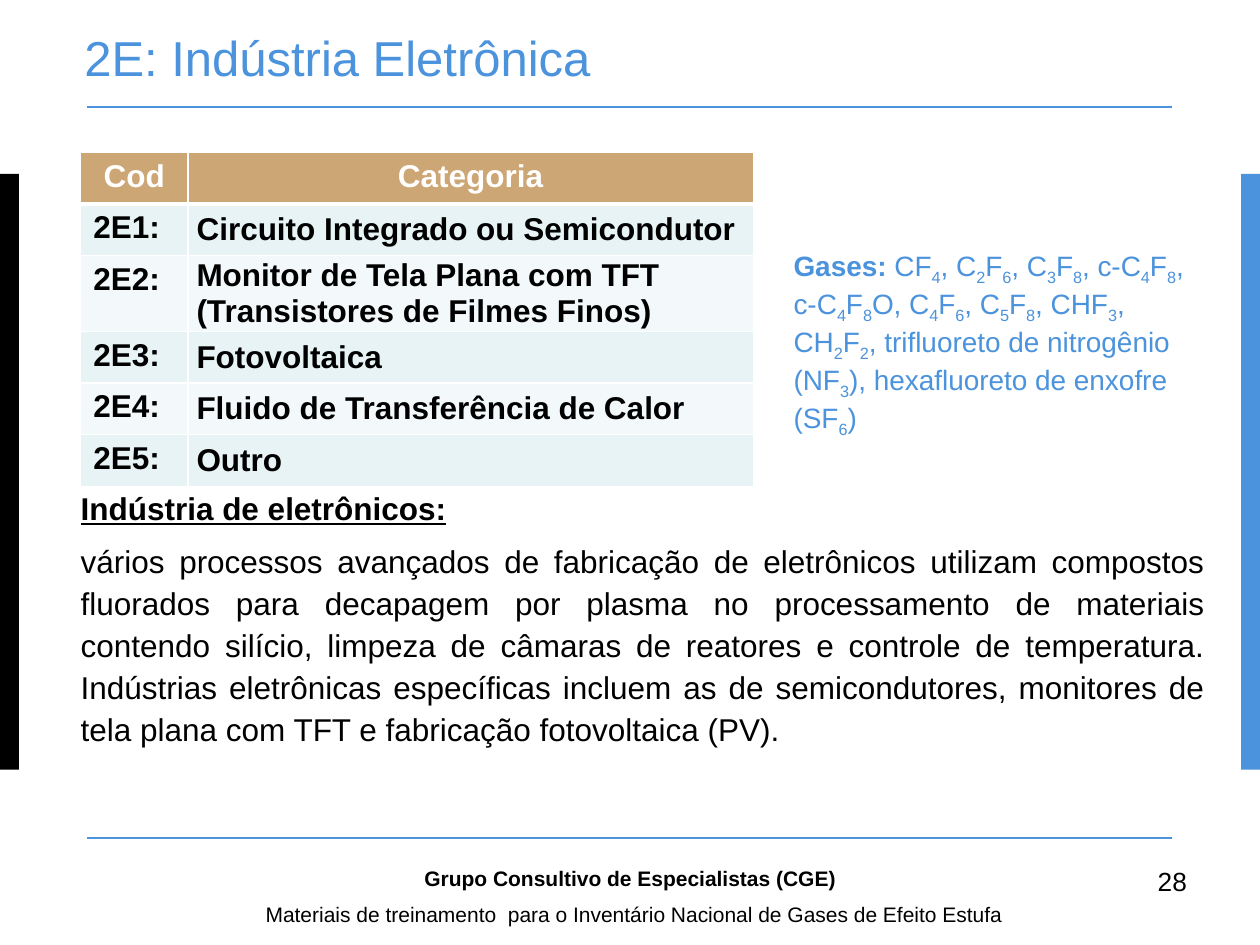
from itertools import groupby

from lxml import etree
from pptx import Presentation
from pptx.dml.color import RGBColor
from pptx.enum.shapes import MSO_CONNECTOR, MSO_SHAPE
from pptx.enum.text import MSO_ANCHOR, PP_ALIGN
from pptx.oxml.ns import qn
from pptx.util import Pt

SCALE = 9144  # EMU in one px, 100 px to the inch
RECT = MSO_SHAPE.RECTANGLE
STRAIGHT = MSO_CONNECTOR.STRAIGHT
TOP, MIDDLE = MSO_ANCHOR.TOP, MSO_ANCHOR.MIDDLE
LEFT, CENTER, JUSTIFY = PP_ALIGN.LEFT, PP_ALIGN.CENTER, PP_ALIGN.JUSTIFY

BLUE, BLACK, WHITE, TAN = "4B93DC", "000000", "FFFFFF", "CCA674"
BANDS = ["E7F3F4", "F3F9FA"]

HEAD = ["Cod", "Categoria"]
ROWS = [
    ["2E1:", "Circuito Integrado ou Semicondutor"],
    ["2E2:", "Monitor de Tela Plana com TFT (Transistores de Filmes Finos)"],
    ["2E3:", "Fotovoltaica"],
    ["2E4:", "Fluido de Transferência de Calor"],
    ["2E5:", "Outro"],
]
GASES = ("CF4, C2F6, C3F8, c-C4F8, c-C4F8O, C4F6, C5F8, CHF3, CH2F2, "
         "trifluoreto de nitrogênio (NF3), hexafluoreto de enxofre (SF6)")
BODY = ("vários processos avançados de fabricação de eletrônicos utilizam "
        "compostos fluorados para decapagem por plasma no processamento de "
        "materiais contendo silício, limpeza de câmaras de reatores e controle "
        "de temperatura. Indústrias eletrônicas específicas incluem as de "
        "semicondutores, monitores de tela plana com TFT e fabricação "
        "fotovoltaica (PV).")


def px(n):
    return round(n * SCALE)


def paint(color, code):
    """Set a fill or font colour from a hex string."""
    if hasattr(color, "solid"):
        color.solid()
        color = color.fore_color
    color.rgb = RGBColor.from_string(code)


def style(para, size, code, bold=None, align=LEFT):
    para.alignment = align
    font = para.font
    font.name, font.size, font.bold = "Arial", Pt(size), bold
    paint(font.color, code)


def frame(slide, box, anchor=TOP, inset=(10, 5)):
    """Add a wrapping text box and return its text frame."""
    text = slide.shapes.add_textbox(*map(px, box)).text_frame
    text.word_wrap = True
    text.vertical_anchor = anchor
    text.margin_left = text.margin_right = px(inset[0])
    text.margin_top = text.margin_bottom = px(inset[1])
    return text


def label(slide, box, words, size, bold=False):
    para = frame(slide, box).paragraphs[0]
    para.text = words
    style(para, size, BLACK, bold)


def bar(slide, box, code):
    shape = slide.shapes.add_shape(RECT, *map(px, box))
    shape.shadow.inherit = False
    paint(shape.fill, code)
    shape.line.fill.background()


def rule(slide, left, top, width):
    line = slide.shapes.add_connector(
        STRAIGHT, px(left), px(top), px(left + width), px(top))
    paint(line.line.fill, BLUE)
    line.line.width = Pt(1)
    etree.SubElement(line._element.spPr, qn("a:effectLst"))


def title(slide, box):
    para = frame(slide, box, MIDDLE, (0, 0)).paragraphs[0]
    para.text = "2E: Indústria Eletrônica"
    para.line_spacing = Pt(15)
    style(para, 28, BLUE)


def border(cell, top, bottom):
    """Draw white cell borders; top and bottom are widths in points."""
    props = cell._tc.get_or_add_tcPr()
    for side, width in zip("LRTB", (1, 1, top, bottom)):
        line = etree.SubElement(props, qn(f"a:ln{side}"), w=str(Pt(width)))
        fill = etree.SubElement(line, qn("a:solidFill"))
        etree.SubElement(fill, qn("a:srgbClr"), val=WHITE)


def codes(slide, box, widths, height):
    """Table of category codes."""
    rows = [HEAD] + ROWS
    grid = slide.shapes.add_table(len(rows), len(HEAD), *map(px, box)).table
    for col, width in zip(grid.columns, widths):
        col.width = px(width)
    for i, row in enumerate(rows):
        grid.rows[i].height = px(height)
        for j, words in enumerate(row):
            cell = grid.cell(i, j)
            border(cell, 3 if i == 1 else 1, 3 if i == 0 else 1)
            paint(cell.fill, BANDS[(i - 1) % 2] if i else TAN)
            para = cell.text_frame.paragraphs[0]
            para.text = words
            style(para, 18, BLACK if i else WHITE, True, LEFT if i else CENTER)
            if i and j:
                cell.vertical_anchor = MIDDLE
                cell.margin_left = cell.margin_right = px(7)
                cell.margin_top = cell.margin_bottom = 0


def gases(slide, box):
    """List of gases, with every digit lowered."""
    para = frame(slide, box).paragraphs[0]
    style(para, 16, BLUE)
    lead = para.add_run()
    lead.text = "Gases: "
    lead.font.bold = True
    for low, part in groupby(GASES, str.isdigit):
        run = para.add_run()
        run.text = "".join(part)
        if low:
            run._r.get_or_add_rPr().set("baseline", "-25000")


def body(slide, box):
    text = frame(slide, box, inset=(0, 0))
    first, second = text.paragraphs[0], text.add_paragraph()
    first.text, second.text = "Indústria de eletrônicos:", BODY
    for para in (first, second):
        para.line_spacing = Pt(24)
        style(para, 18, BLACK, para is first, JUSTIFY)
    first.font.underline = True
    second.space_before = Pt(6)


def footer(slide, left, top):
    label(slide, (left, top + 29, 636, 10),
          "Materiais de treinamento  para o Inventário Nacional de Gases de "
          "Efeito Estufa", 12)
    label(slide, (left + 126, top, 370, 29),
          "Grupo Consultivo de Especialistas (CGE)", 12, True)
    label(slide, (left + 708, top, 47, 35), "28", 15)


def main():
    deck = Presentation()
    deck.slide_width, deck.slide_height = px(1000), px(750)
    slide = deck.slides.add_slide(deck.slide_layouts[6])
    for left, code in ((0, BLACK), (985, BLUE)):
        bar(slide, (left, 138, 15, 473), code)
    for top in (85, 665):
        rule(slide, 69, top, 861)
    title(slide, (67, 16, 866, 84))
    body(slide, (64, 385, 892, 256))
    codes(slide, (64, 121, 534, 246), (85, 449), 41)
    gases(slide, (620, 192, 353, 167))
    footer(slide, 201, 682)
    deck.save("out.pptx")


if __name__ == "__main__":
    main()
